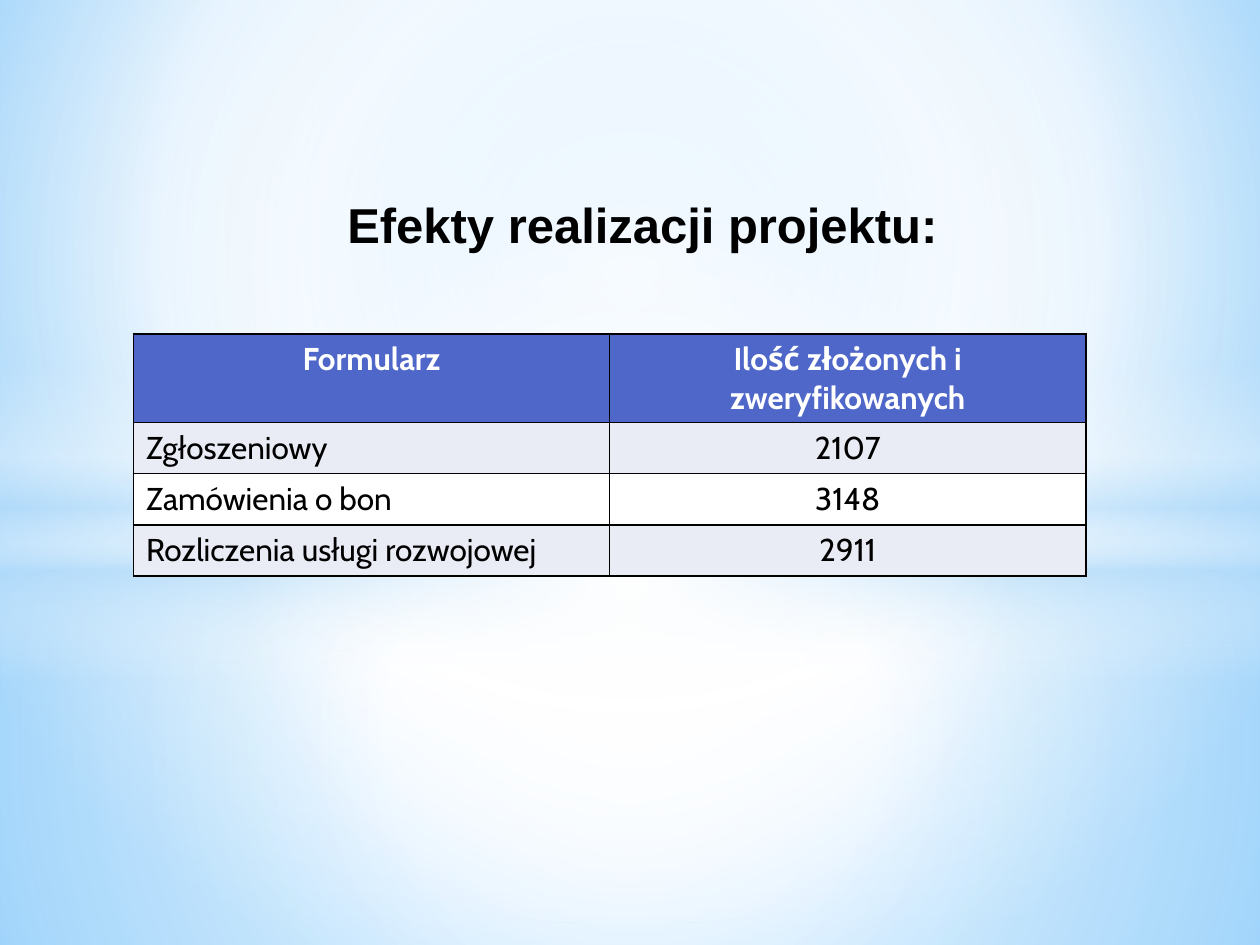
from pptx import Presentation
from pptx.dml.color import RGBColor
from pptx.enum.shapes import MSO_SHAPE as Shape
from pptx.enum.text import PP_ALIGN as Align
from pptx.oxml import parse_xml
from pptx.oxml.ns import nsdecls, qn
from pptx.util import Cm, Pt

BLACK = RGBColor(0x00, 0x00, 0x00)
WHITE = RGBColor(0xFF, 0xFF, 0xFF)
HEADER_BLUE = RGBColor(0x4E, 0x67, 0xC8)
BAND_GREY = RGBColor(0xE9, 0xEB, 0xF5)
SKY = RGBColor(0x9E, 0xD5, 0xFF)
DEEP_SKY = RGBColor(0x5B, 0xB9, 0xFF)
PALE_SKY = RGBColor(0xB4, 0xDC, 0xFA)

CENTRE = (50, 50, 50, 50)
TITLE = "Efekty realizacji projektu:"
ROWS = [
    ("Formularz", "Ilość złożonych i zweryfikowanych"),
    ("Zgłoszeniowy", "2107"),
    ("Zamówienia o bon", "3148"),
    ("Rozliczenia usługi rozwojowej", "2911"),
]


def gradient(stops, focus=None):
    """Stops are (position, colour, opacity) in percent; no focus means top to bottom."""
    stop_xml = "".join(
        f'<a:gs pos="{position * 1000}"><a:srgbClr val="{colour}">'
        f'<a:alpha val="{opacity * 1000}"/></a:srgbClr></a:gs>'
        for position, colour, opacity in stops
    )
    if focus:
        left, top, right, bottom = (side * 1000 for side in focus)
        course = (
            f'<a:path path="circle"><a:fillToRect l="{left}" t="{top}" '
            f'r="{right}" b="{bottom}"/></a:path>'
        )
    else:
        course = '<a:lin ang="5400000" scaled="0"/>'
    return parse_xml(
        f'<a:gradFill {nsdecls("a")} rotWithShape="1">'
        f"<a:gsLst>{stop_xml}</a:gsLst>{course}</a:gradFill>"
    )


def set_gradient(fill, properties, stops, focus=None):
    fill.background()
    properties.replace(properties.find(qn("a:noFill")), gradient(stops, focus))


def add_glow(page, kind, top, height, stops, focus=None):
    """Add a full-width translucent shape."""
    glow = page.shapes.add_shape(kind, 0, Cm(top), Cm(25.4), Cm(height))
    glow.shadow.inherit = False
    glow.line.fill.background()
    set_gradient(glow.fill, glow.element.spPr, stops, focus)


def add_backdrop(page):
    fill = page.background.fill
    properties = page.element.find(".//" + qn("p:bgPr"))
    set_gradient(
        fill, properties,
        [(0, SKY, 100), (60, WHITE, 100), (100, DEEP_SKY, 100)], (20, 10, 20, 60),
    )
    add_glow(page, Shape.RECTANGLE, 10.74, 8.31,
             [(0, WHITE, 91), (37, WHITE, 76), (100, PALE_SKY, 79)], CENTRE)
    add_glow(page, Shape.RECTANGLE, 0, 10.74,
             [(0, WHITE, 89), (48, WHITE, 62), (100, PALE_SKY, 79)], CENTRE)
    add_glow(page, Shape.RECTANGLE, 7.37, 6.35,
             [(0, WHITE, 0), (29, WHITE, 30), (45, PALE_SKY, 40),
              (55, WHITE, 26), (65, PALE_SKY, 60), (100, WHITE, 0)])
    add_glow(page, Shape.OVAL, 4.45, 14.17,
             [(0, WHITE, 100), (54, WHITE, 0)], CENTRE)


def write(para, text, name, size, colour, bold, align):
    para.text = text
    para.alignment = align
    font = para.font
    font.name, font.size, font.bold = name, Pt(size), bold
    font.color.rgb = colour


def add_title(page):
    box = page.shapes.add_textbox(Cm(0.5), Cm(2.92), Cm(24.9), Cm(13.08))
    frame = box.text_frame
    frame.word_wrap = True
    frame.margin_top = Cm(1)
    write(frame.paragraphs[0], TITLE, "Arial", 28, BLACK, True, Align.CENTER)


def set_borders(cell):
    properties = cell._tc.get_or_add_tcPr()
    for index, side in enumerate(("lnL", "lnR", "lnT", "lnB")):
        properties.insert(index, parse_xml(
            f'<a:{side} {nsdecls("a")} w="{Pt(1)}"><a:solidFill>'
            f'<a:srgbClr val="{BLACK}"/></a:solidFill></a:{side}>'
        ))


def add_results(page):
    table = page.shapes.add_table(
        len(ROWS), 2, Cm(2.69), Cm(6.73), Cm(19.2), Cm(4.88)
    ).table
    for r, texts in enumerate(ROWS):
        header = r == 0
        table.rows[r].height = Cm(1.79 if header else 1.03)
        shade = HEADER_BLUE if header else BAND_GREY if r % 2 else WHITE
        for c, text in enumerate(texts):
            cell = table.cell(r, c)
            cell.fill.solid()
            cell.fill.fore_color.rgb = shade
            set_borders(cell)
            align = Align.CENTER if header or c else Align.LEFT
            write(cell.text_frame.paragraphs[0], text, "Cabin", 18,
                  WHITE if header else BLACK, header, align)


def main():
    deck = Presentation()
    deck.slide_width, deck.slide_height = Cm(25.4), Cm(19.05)
    page = deck.slides.add_slide(deck.slide_layouts[6])
    add_backdrop(page)
    add_title(page)
    add_results(page)
    deck.save("out.pptx")


if __name__ == "__main__":
    main()
